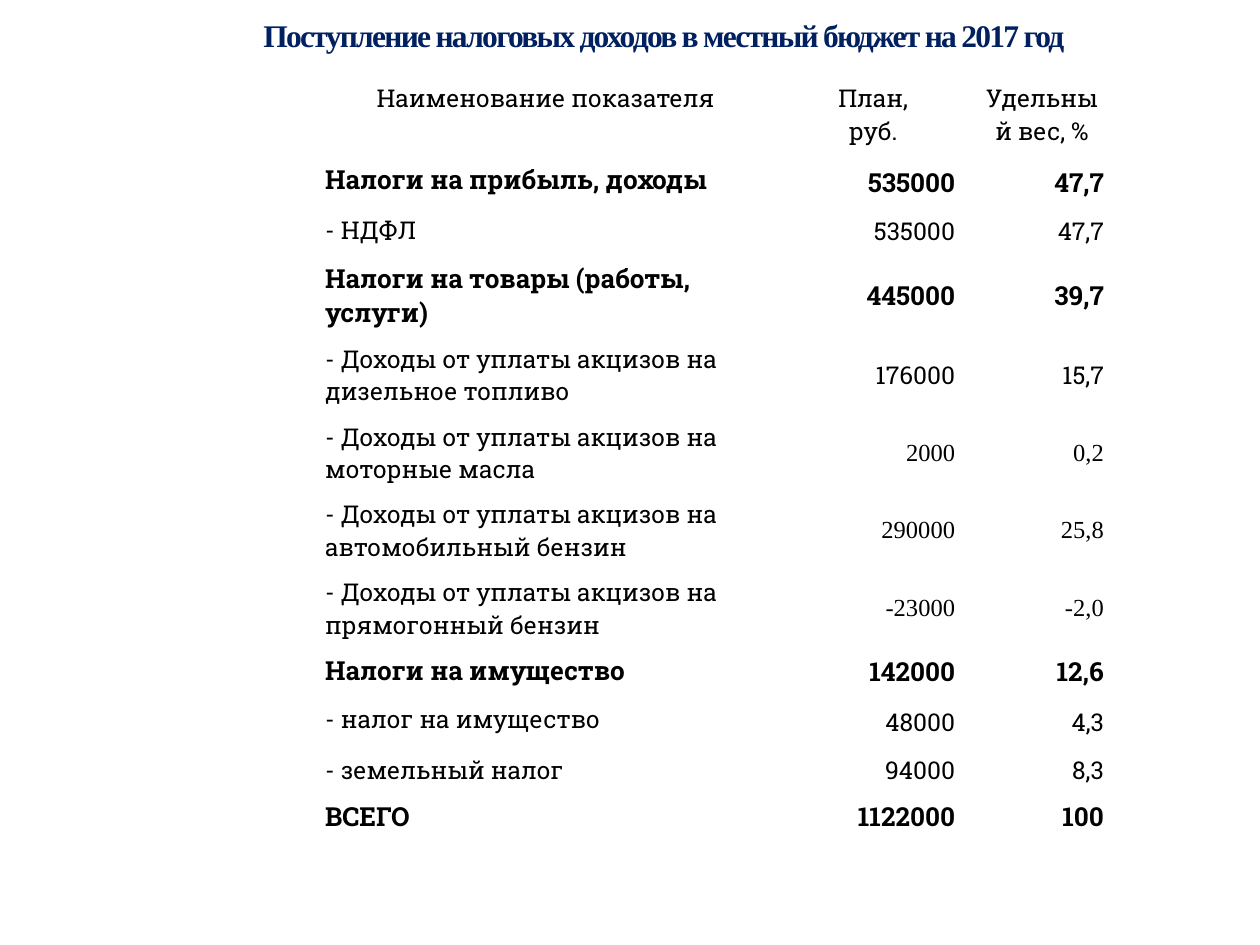
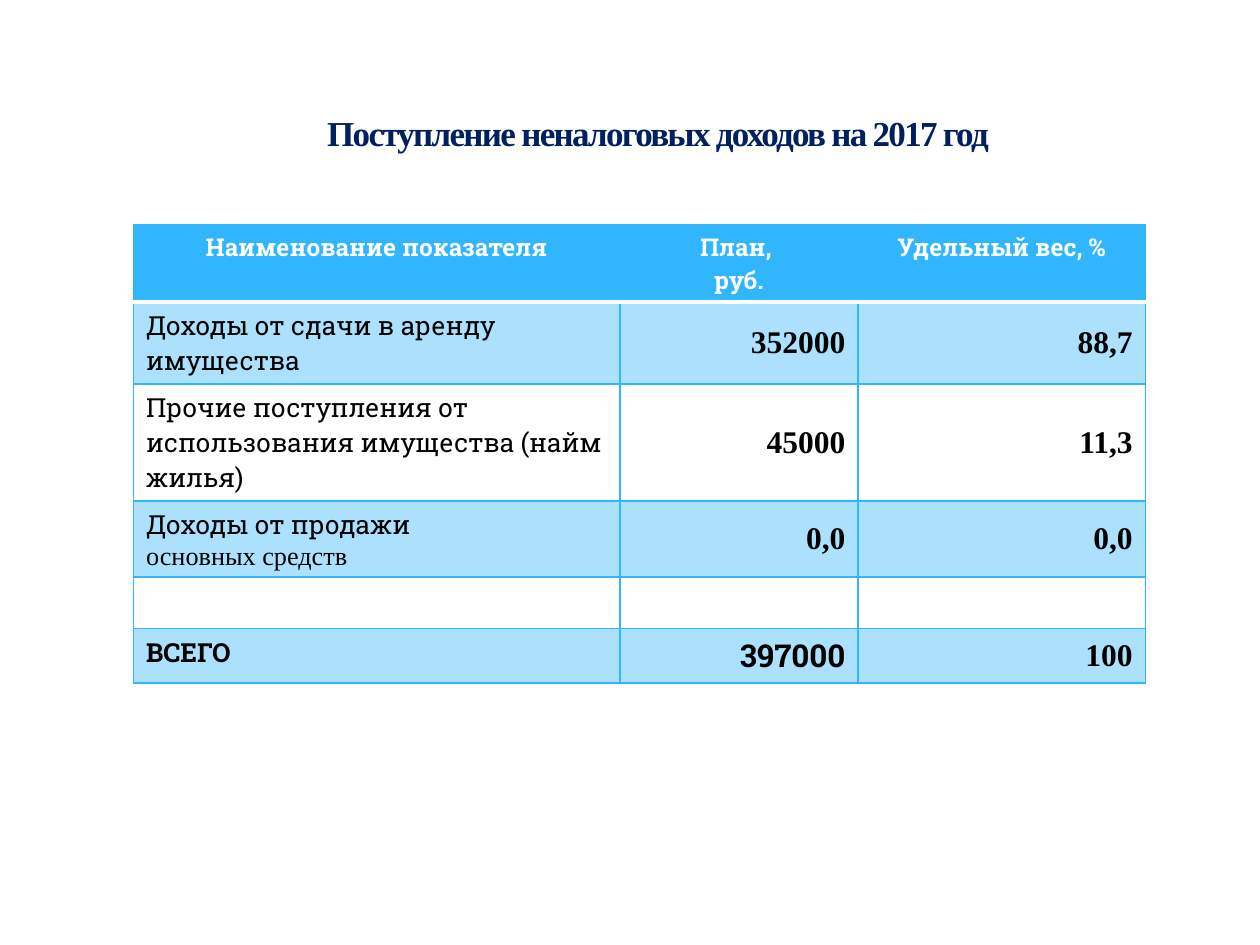
from lxml.etree import SubElement
from pptx import Presentation
from pptx.dml.color import RGBColor
from pptx.enum.text import MSO_ANCHOR, MSO_AUTO_SIZE, PP_ALIGN
from pptx.oxml import parse_xml
from pptx.oxml.ns import nsdecls, qn
from pptx.util import Pt

NAVY = RGBColor(0x00, 0x20, 0x60)
SKY = RGBColor(0x31, 0xB6, 0xFD)
OUTLINE = RGBColor(0xAF, 0xCC, 0xDE)
BLACK = RGBColor(0, 0, 0)
WHITE = RGBColor(255, 255, 255)
SLAB = "Roboto Slab"
TIMES = "Times New Roman"
PLAIN_TABLE_STYLE = "{2D5ABB26-0587-4C30-8999-92F81FD0307C}"

TAX_HEADINGS = ("Наименование показателя", "План,\nруб.", "Удельный вес, %")
TAX_GROUP, TAX_ITEM, TAX_EXCISE = (15, True, SLAB), (14, False, SLAB), (14, False, TIMES)
TAX_ROWS = [
    ("Налоги на прибыль, доходы", "535000", "47,7", TAX_GROUP),
    ("- НДФЛ", "535000", "47,7", TAX_ITEM),
    ("Налоги на товары (работы, услуги)", "445000", "39,7", TAX_GROUP),
    ("- Доходы от уплаты акцизов на дизельное топливо", "176000", "15,7", TAX_ITEM),
    ("- Доходы от уплаты акцизов на моторные масла", "2000", "0,2", TAX_EXCISE),
    ("- Доходы от уплаты акцизов на автомобильный бензин", "290000", "25,8", TAX_EXCISE),
    ("- Доходы от уплаты акцизов на прямогонный бензин", "-23000", "-2,0", TAX_EXCISE),
    ("Налоги на имущество", "142000", "12,6", TAX_GROUP),
    ("- налог на имущество", "48000", "4,3", TAX_ITEM),
    ("- земельный налог", "94000", "8,3", TAX_ITEM),
    ("ВСЕГО", "1122000", "100", TAX_GROUP),
]
TAX_HEIGHTS = [46, 29.5, 26.6, 33, 33, 28, 28, 28, 28, 29.5, 12, 12, 12]

NON_TAX_HEADINGS = ("Наименование показателя", "План, \nруб.", "Удельный вес, %")
NON_TAX_ROWS = [
    ("Доходы от сдачи в аренду имущества", "352000", "88,7"),
    ("Прочие поступления от использования имущества (найм жилья)", "45000", "11,3"),
    ("Доходы от продажи", "0,0", "0,0"),
    ("", "", ""),
    ("ВСЕГО", "397000", "100"),
]


def write(frame, text, size=14, font=SLAB, color=BLACK, bold=False, align=PP_ALIGN.LEFT):
    """Append each line of text as a formatted paragraph and return the runs."""
    runs = []
    for line in text.split("\n"):
        paragraph = frame.add_paragraph() if frame.text else frame.paragraphs[0]
        paragraph.alignment = align
        run = paragraph.add_run()
        run.text = line
        run.font.size, run.font.name, run.font.bold = Pt(size), font, bold
        run.font.color.rgb = color
        runs.append(run)
    return runs


def add_titled_slide(deck, text, box, size):
    """Add a title-only slide with its navy, thinly outlined title in the box."""
    slide = deck.slides.add_slide(deck.slide_layouts[5])
    title = slide.shapes.title
    title.left, title.top, title.width, title.height = map(Pt, box)
    title.text_frame.auto_size = MSO_AUTO_SIZE.NONE
    title.text_frame.vertical_anchor = MSO_ANCHOR.MIDDLE
    for run in write(title.text_frame, text, size=size, font=TIMES, color=NAVY,
                     bold=True, align=PP_ALIGN.CENTER):
        properties = run.font._element
        properties.set("spc", "-100")
        properties.insert(0, parse_xml(
            f'<a:ln {nsdecls("a")} w="3175"><a:solidFill><a:srgbClr val="{OUTLINE}">'
            '<a:alpha val="25000"/></a:srgbClr></a:solidFill></a:ln>'))
    return slide


def add_plain_table(slide, box, widths, heights):
    """Add an unstyled table in the box with the given column and row sizes."""
    frame = slide.shapes.add_table(len(heights), len(widths), *map(Pt, box))
    for style in frame.element.iter(qn("a:tableStyleId")):
        style.text = PLAIN_TABLE_STYLE
    table = frame.table
    table.first_row = table.horz_banding = False
    for column, width in zip(table.columns, widths):
        column.width = Pt(width)
    for row, height in zip(table.rows, heights):
        row.height = Pt(height)
    return table


def write_headings(table, headings, **style):
    """Write centred headings into the first row."""
    for column, heading in enumerate(headings):
        write(table.cell(0, column).text_frame, heading, align=PP_ALIGN.CENTER, **style)


def write_amount(cell, amount, **style):
    """Write a right-aligned amount in the middle of the cell."""
    cell.vertical_anchor = MSO_ANCHOR.MIDDLE
    write(cell.text_frame, amount, align=PP_ALIGN.RIGHT, **style)


def shade(cell, opacity=100):
    """Fill the cell with sky blue at the given opacity in percent."""
    cell.fill.solid()
    cell.fill.fore_color.rgb = SKY
    if opacity < 100:
        for tint in cell._tc.tcPr.iter(qn("a:srgbClr")):
            SubElement(tint, qn("a:alpha"), val=str(opacity * 1000))


def rule_cell(cell, row):
    """Draw sky-blue cell borders, with a thick white rule below the headings."""
    white_side = {0: "B", 1: "T"}.get(row)
    for position, side in enumerate("LRTB"):
        color, width = (WHITE, 3) if side == white_side else (SKY, 1)
        cell._tc.get_or_add_tcPr().insert(position, parse_xml(
            f'<a:ln{side} {nsdecls("a")} w="{Pt(width)}"><a:solidFill>'
            f'<a:srgbClr val="{color}"/></a:solidFill></a:ln{side}>'))


def add_tax_table(slide, box):
    """Add the tax revenue table, with bold group and total rows."""
    table = add_plain_table(slide, box, (266.4, 108, 85), TAX_HEIGHTS)
    write_headings(table, TAX_HEADINGS)
    for row, (source, plan, share, (size, bold, font)) in enumerate(TAX_ROWS, 1):
        write(table.cell(row, 0).text_frame, source, size=size, bold=bold)
        for column, amount in enumerate((plan, share), 1):
            write_amount(table.cell(row, column), amount, size=size, bold=bold, font=font)


def add_non_tax_table(slide, box):
    """Add the ruled and banded non-tax revenue table."""
    table = add_plain_table(slide, box, (277.9, 136.1, 164.2), [29.5] * 6)
    write_headings(table, NON_TAX_HEADINGS, color=WHITE, bold=True)
    for row, (source, *amounts) in enumerate(NON_TAX_ROWS, 1):
        if not source:
            continue
        write(table.cell(row, 0).text_frame, source, size=15, bold=source == "ВСЕГО")
        for column, amount in enumerate(amounts, 1):
            font = SLAB if amount == "397000" else TIMES
            write_amount(table.cell(row, column), amount, size=18, font=font, bold=True)
    write(table.cell(3, 0).text_frame, "основных средств", size=15, font=TIMES)
    for row in range(len(table.rows)):
        for column in range(len(table.columns)):
            cell = table.cell(row, column)
            if row == 0:
                shade(cell)
            elif row % 2:
                shade(cell, opacity=40)
            rule_cell(cell, row)


def main():
    """Build both revenue slides and save the deck."""
    deck = Presentation()
    deck.slide_width, deck.slide_height = Pt(720), Pt(540)
    tax = add_titled_slide(deck, "Поступление налоговых доходов в местный бюджет на 2017 год",
                           (115.9, 0, 527, 39.6), 18)
    add_tax_table(tax, (178.6, 43.2, 459.4, 443.5))
    non_tax = add_titled_slide(deck, "Поступление неналоговых доходов на 2017 год",
                               (99.4, 49, 553, 53.3), 20)
    add_non_tax_table(non_tax, (76.3, 128.2, 578.2, 232.6))
    deck.save("out.pptx")


if __name__ == "__main__":
    main()
